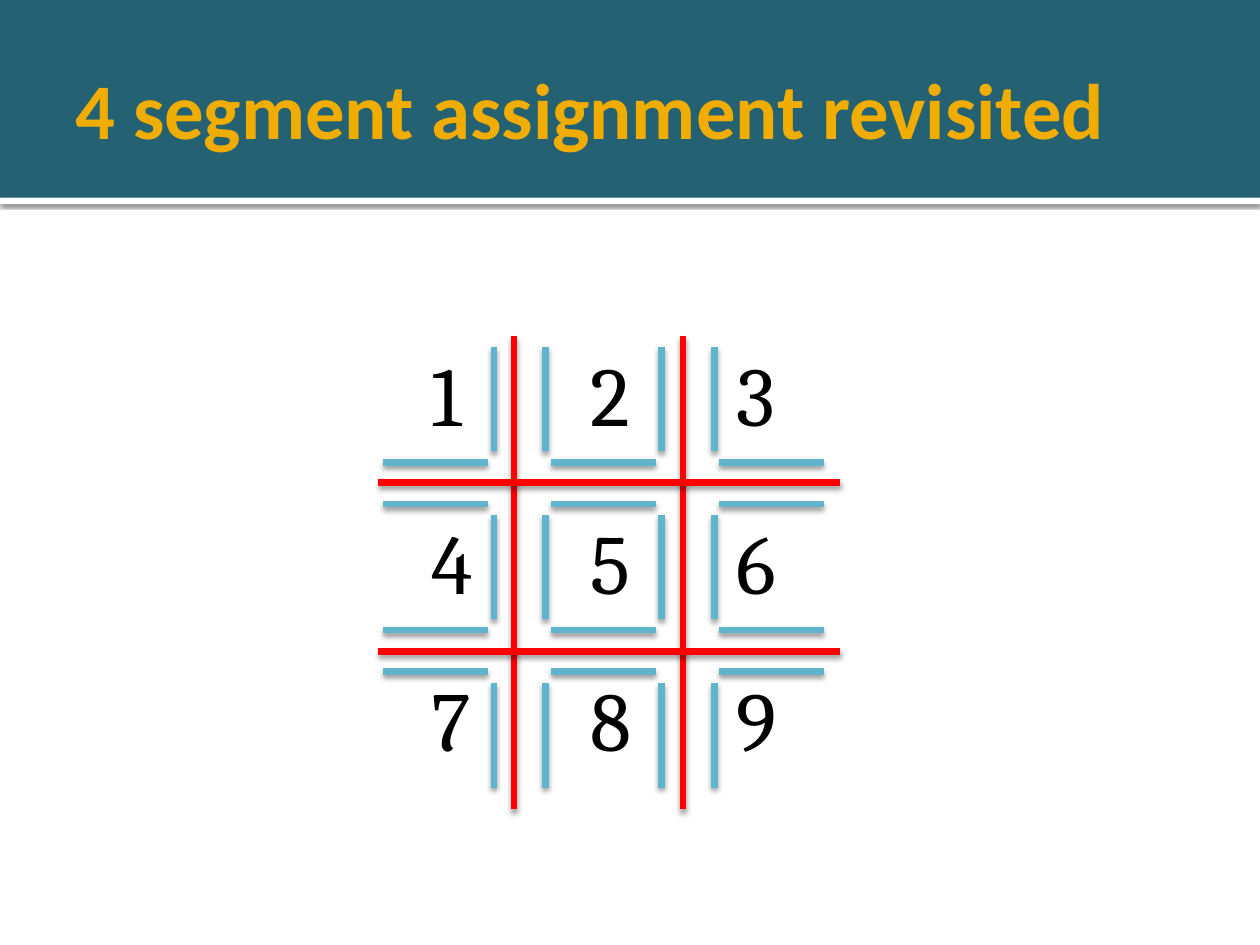
"""Build the tic-tac-toe segment assignment slide."""
from dataclasses import dataclass
from typing import Any

import lxml.etree
import pptx
import pptx.dml.color
import pptx.enum.shapes
import pptx.enum.text
import pptx.oxml
import pptx.oxml.ns
import pptx.util

Inches = pptx.util.Inches
Pt = pptx.util.Pt


@dataclass(frozen=True)
class Shadow:
    opacity: int
    blur: float
    distance: float


@dataclass(frozen=True)
class Theme:
    band: str = "246172"
    title: str = "F0AD00"
    paper: str = "FFFFFF"
    ink: str = "000000"
    segment: str = "60B5CC"
    grid: str = "FF0000"
    title_font: str = "Calibri"
    digit_font: str = "Cambria"
    title_size: float = 45
    digit_size: float = 48
    line_width: float = 3.82
    rule_shadow: Shadow = Shadow(60, 2.5, 0.8)
    line_shadow: Shadow = Shadow(38, 3.1, 2)


@dataclass(frozen=True)
class Line:
    x1: float
    y1: float
    x2: float
    y2: float
    color: str


@dataclass(frozen=True)
class Label:
    text: str
    left: float
    top: float
    width: float
    height: float
    font: str
    size: float
    color: str
    bold: bool = False


THEME = Theme()
CELL = 1.335
SEGMENT = 0.83
DIGIT_WIDTHS = (0.41, 0.53, 0.51, 0.56, 0.52, 0.57, 0.53, 0.56, 0.57)


def rgb(color: str) -> pptx.dml.color.RGBColor:
    return pptx.dml.color.RGBColor.from_string(color)


def add_shadow(sp: Any, shadow: Shadow) -> None:
    sp._element.spPr.append(pptx.oxml.parse_xml(
        f'<a:effectLst {pptx.oxml.ns.nsdecls("a")}>'
        f'<a:outerShdw blurRad="{Pt(shadow.blur)}" dist="{Pt(shadow.distance)}" '
        f'dir="5400000" algn="ctr" rotWithShape="0"><a:srgbClr val="{THEME.ink}">'
        f'<a:alpha val="{shadow.opacity * 1000}"/></a:srgbClr></a:outerShdw></a:effectLst>'))


def add_bar(s: Any, top: float, height: float, color: str) -> Any:
    sp = s.shapes.add_shape(pptx.enum.shapes.MSO_SHAPE.RECTANGLE,
                            0, Inches(top), Inches(10), Inches(height))
    sp.fill.solid()
    sp.fill.fore_color.rgb = rgb(color)
    sp.line.fill.background()
    return sp


def add_line(s: Any, line: Line) -> None:
    sp = s.shapes.add_connector(pptx.enum.shapes.MSO_CONNECTOR.STRAIGHT,
                                Inches(line.x1), Inches(line.y1),
                                Inches(line.x2), Inches(line.y2))
    sp.line.color.rgb = rgb(line.color)
    sp.line.width = Pt(THEME.line_width)
    add_shadow(sp, THEME.line_shadow)


def add_label(s: Any, label: Label) -> Any:
    sp = s.shapes.add_textbox(Inches(label.left), Inches(label.top),
                              Inches(label.width), Inches(label.height))
    p = sp.text_frame.paragraphs[0]
    p.text = label.text
    p.font.name = label.font
    p.font.size = Pt(label.size)
    p.font.bold = label.bold
    p.font.color.rgb = rgb(label.color)
    return sp.text_frame


def add_header(s: Any) -> None:
    add_shadow(add_bar(s, 1.57, 0.05, THEME.paper), THEME.rule_shadow)
    add_bar(s, 0, 1.57, THEME.band).shadow.inherit = False
    tf = add_label(s, Label("4 segment assignment revisited", 0.5, 0.17, 9, 1.37,
                            THEME.title_font, THEME.title_size, THEME.title, True))
    tf.word_wrap = True
    tf.vertical_anchor = pptx.enum.text.MSO_ANCHOR.MIDDLE


def add_board(s: Any) -> None:
    for i in range(3):
        x, y = 3.04 + CELL * i, 2.75 + CELL * i
        for row in (3.67, 4, 5, 5.33):
            add_line(s, Line(x, row, x + SEGMENT, row, THEME.segment))
        for column in (3.92, 4.33, 5.25, 5.67):
            add_line(s, Line(column, y, column, y + SEGMENT, THEME.segment))
    for x in (4.08, 5.42):
        add_line(s, Line(x, 2.67, x, 6.42, THEME.grid))
    for y in (3.83, 5.17):
        add_line(s, Line(3, y, 6.67, y, THEME.grid))


def add_digits(s: Any) -> None:
    lefts, tops = (3.33, 4.59, 5.75), (2.67, 4, 5.25)
    for i, width in enumerate(DIGIT_WIDTHS):
        row, column = divmod(i, 3)
        tf = add_label(s, Label(str(i + 1), lefts[column], tops[row], width, 0.91,
                                THEME.digit_font, THEME.digit_size, THEME.ink))
        tf.word_wrap = False
        tf.auto_size = pptx.enum.text.MSO_AUTO_SIZE.SHAPE_TO_FIT_TEXT


def main() -> None:
    prs = pptx.Presentation()
    prs.slide_width, prs.slide_height = Inches(10), Inches(7.5)
    s = prs.slides.add_slide(prs.slide_layouts[6])
    add_header(s)
    add_board(s)
    add_digits(s)
    prs.save("out.pptx")


if __name__ == "__main__":
    main()
